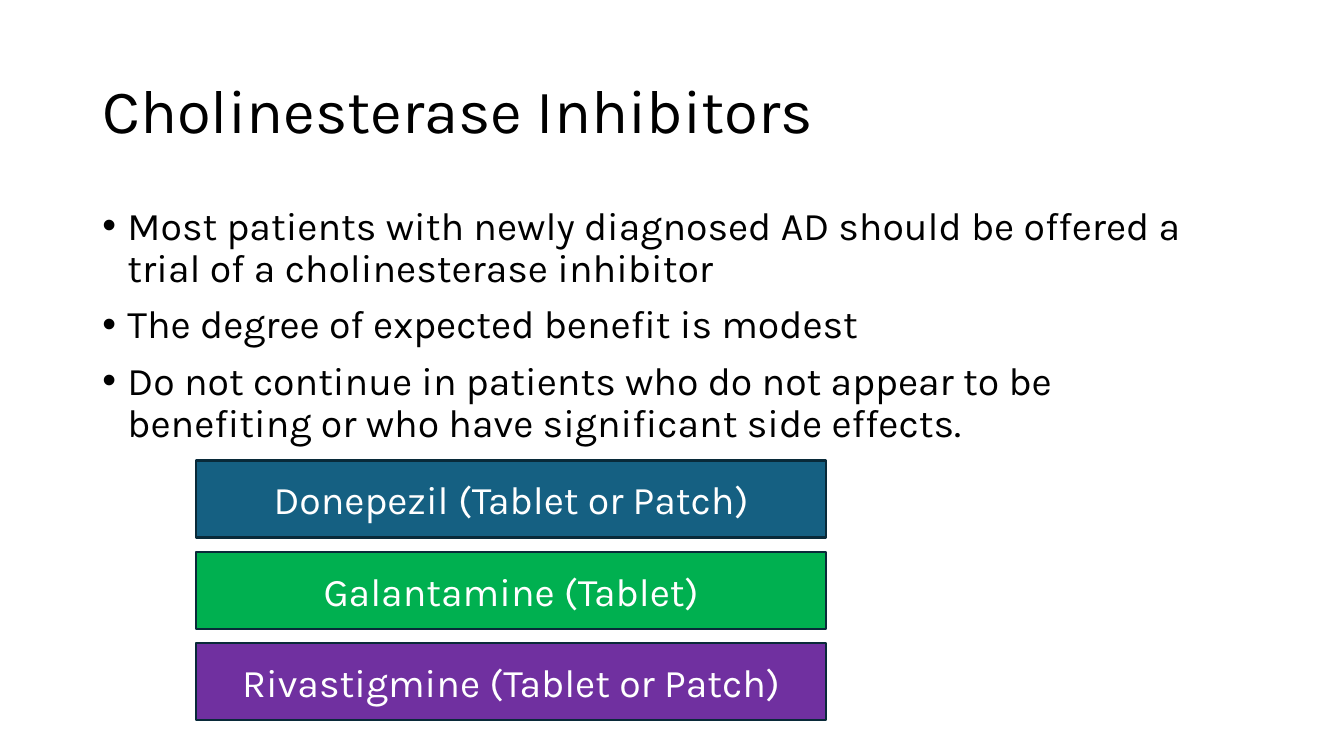
from lxml.etree import SubElement
from pptx import Presentation
from pptx.dml.color import RGBColor
from pptx.enum.shapes import MSO_SHAPE
from pptx.enum.text import MSO_ANCHOR, PP_ALIGN
from pptx.oxml.ns import qn
from pptx.util import Pt

COLORS = {
    "ink": "000000",
    "white": "FFFFFF",
    "outline": "092A39",
    "donepezil": "156082",
    "galantamine": "00B050",
    "rivastigmine": "7030A0",
}
ADVICE = [
    "Most patients with newly diagnosed AD should be offered a trial of a cholinesterase inhibitor",
    "The degree of expected benefit is modest",
    "Do not continue in patients who do not appear to be benefiting or who have significant side effects.",
]
DRUGS = [
    ("Donepezil (Tablet or Patch)", "donepezil"),
    ("Galantamine (Tablet)", "galantamine"),
    ("Rivastigmine (Tablet or Patch)", "rivastigmine"),
]
MARGIN, CONTENT_WIDTH = 66, 828
DRUG_LEFT, DRUG_TOP, DRUG_STEP = 140, 329, 65.25
DRUG_WIDTH, DRUG_HEIGHT = 450, 55


def color(name):
    return RGBColor.from_string(COLORS[name])


def apply_format(target, values):
    for name, value in values.items():
        setattr(target, name, value)


def write(paragraph, text, size, ink, **layout):
    paragraph.text = text
    apply_format(paragraph, layout)
    apply_format(paragraph.font, {"name": "Karla", "size": Pt(size)})
    paragraph.font.color.rgb = color(ink)


def add_text_frame(slide, top, height, anchor):
    box = slide.shapes.add_textbox(Pt(MARGIN), Pt(top), Pt(CONTENT_WIDTH), Pt(height))
    apply_format(box.text_frame, {"word_wrap": True, "vertical_anchor": anchor})
    return box.text_frame


def add_bullet(paragraph):
    properties = paragraph._p.get_or_add_pPr()
    properties.set("marL", str(Pt(18)))
    properties.set("indent", str(Pt(-18)))
    SubElement(properties, qn("a:buFont"), typeface="Arial")
    SubElement(properties, qn("a:buChar"), char="•")


def add_title(slide, text):
    title = add_text_frame(slide, 28.75, 104.4, MSO_ANCHOR.MIDDLE)
    write(title.paragraphs[0], text, 44, "ink", line_spacing=0.9)


def add_advice(slide, points):
    advice = add_text_frame(slide, 143.75, 342.6, MSO_ANCHOR.TOP)
    for index, point in enumerate(points):
        paragraph = advice.add_paragraph() if index else advice.paragraphs[0]
        add_bullet(paragraph)
        write(paragraph, point, 28, "ink", line_spacing=0.9,
              space_before=Pt(10 if index else 0))


def add_drug(slide, row, label, fill):
    drug = slide.shapes.add_shape(
        MSO_SHAPE.RECTANGLE, Pt(DRUG_LEFT), Pt(DRUG_TOP + row * DRUG_STEP),
        Pt(DRUG_WIDTH), Pt(DRUG_HEIGHT))
    drug.shadow.inherit = False
    drug.fill.solid()
    drug.fill.fore_color.rgb = color(fill)
    drug.line.color.rgb = color("outline")
    drug.line.width = Pt(1.5)
    apply_format(drug.text_frame, {"word_wrap": True, "vertical_anchor": MSO_ANCHOR.MIDDLE})
    write(drug.text_frame.paragraphs[0], label, 28, "white", alignment=PP_ALIGN.CENTER)


def main():
    deck = Presentation()
    apply_format(deck, {"slide_width": Pt(960), "slide_height": Pt(540)})
    slide = deck.slides.add_slide(deck.slide_layouts[6])
    add_title(slide, "Cholinesterase Inhibitors")
    add_advice(slide, ADVICE)
    for row, (label, fill) in enumerate(DRUGS):
        add_drug(slide, row, label, fill)
    deck.save("out.pptx")


if __name__ == "__main__":
    main()
